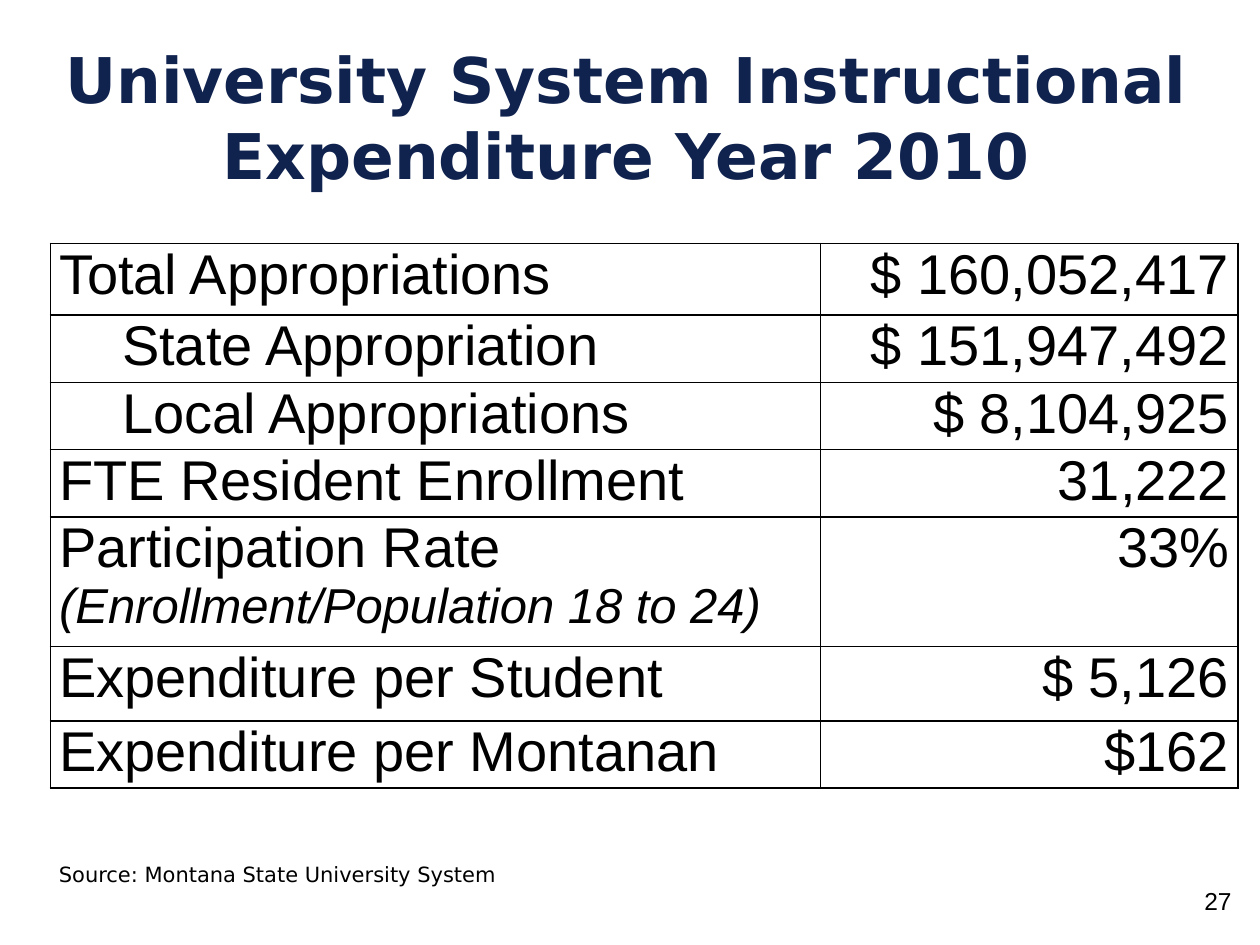
from dataclasses import dataclass

from lxml.etree import SubElement
from pptx import Presentation
from pptx.dml.color import RGBColor
from pptx.enum.text import MSO_ANCHOR, PP_ALIGN
from pptx.oxml.ns import qn
from pptx.slide import Slide
from pptx.table import _Cell
from pptx.text.text import _Paragraph
from pptx.util import Pt

NAVY = RGBColor(0x10, 0x22, 0x4E)
BLACK = RGBColor(0, 0, 0)

TITLE_FORMAT = {"name": "DejaVu Sans", "size": Pt(36), "bold": True}
SOURCE_FORMAT = {"name": "DejaVu Sans", "size": Pt(12)}
NUMBER_FORMAT = {"name": "Arial", "size": Pt(14)}
CELL_FORMAT = {"name": "Arial", "size": Pt(32), "bold": False}
NOTE_FORMAT = CELL_FORMAT | {"size": Pt(28), "italic": True}


@dataclass
class Measure:
    label: str
    value: str
    height: float
    indent: float = 0
    note: str = ""


@dataclass
class Label:
    text: str
    left: float
    top: float
    width: float
    height: float
    style: dict
    color: RGBColor = BLACK
    alignment: PP_ALIGN = PP_ALIGN.LEFT
    anchor: MSO_ANCHOR = MSO_ANCHOR.TOP


LABELS = [
    Label("University System Instructional Expenditure Year 2010", 18.7, 23, 678.2, 87.1,
          TITLE_FORMAT, NAVY, PP_ALIGN.CENTER, MSO_ANCHOR.MIDDLE),
    Label("27", 681.1, 502.6, 38.9, 37.4, NUMBER_FORMAT),
    Label("Source: Montana State University System", 26.6, 488.9, 655.9, 36, SOURCE_FORMAT),
]

MEASURES = [
    Measure("Total Appropriations", "$ 160,052,417", 41),
    Measure("State Appropriation", "$ 151,947,492", 35.3, indent=36),
    Measure("Local Appropriations", "$ 8,104,925", 36.7, indent=36),
    Measure("FTE Resident Enrollment", "31,222", 38.2),
    Measure("Participation Rate ", "33%", 74.2, note="(Enrollment/Population 18 to 24)"),
    Measure("Expenditure per Student", "$ 5,126", 42.5),
    Measure("Expenditure per Montanan", "$162", 38.2),
]
COLUMN_WIDTHS = (440, 238.6)
TABLE_LEFT, TABLE_TOP = 28.8, 139


def add_span(para: _Paragraph, text: str, style: dict, color: RGBColor = BLACK) -> None:
    span = para.add_run()
    span.text = text
    for name, value in style.items():
        setattr(span.font, name, value)
    span.font.color.rgb = color


def add_label(slide: Slide, label: Label) -> None:
    box = slide.shapes.add_textbox(
        Pt(label.left), Pt(label.top), Pt(label.width), Pt(label.height))
    frame = box.text_frame
    frame.word_wrap = True
    frame.vertical_anchor = label.anchor
    para = frame.paragraphs[0]
    para.alignment = label.alignment
    add_span(para, label.text, label.style, label.color)


def format_cell(cell: _Cell) -> None:
    """Set the insets, black borders and empty fill of a cell."""
    insets = {"margin_left": 5, "margin_right": 5, "margin_top": 0, "margin_bottom": 0}
    for name, value in insets.items():
        setattr(cell, name, Pt(value))
    properties = cell._tc.get_or_add_tcPr()
    for side in ("lnL", "lnR", "lnT", "lnB"):
        border = SubElement(properties, qn(f"a:{side}"), w=str(Pt(1)))
        fill = SubElement(border, qn("a:solidFill"))
        SubElement(fill, qn("a:srgbClr"), val=str(BLACK))
    cell.fill.background()


def add_measures(slide: Slide, measures: list[Measure]) -> None:
    frame = slide.shapes.add_table(
        len(measures), len(COLUMN_WIDTHS), Pt(TABLE_LEFT), Pt(TABLE_TOP),
        Pt(sum(COLUMN_WIDTHS)), Pt(sum(measure.height for measure in measures)))
    table = frame.table
    table.first_row = table.horz_banding = False
    for column, width in zip(table.columns, COLUMN_WIDTHS):
        column.width = Pt(width)
    for row, measure in zip(table.rows, measures):
        row.height = Pt(measure.height)
        for cell in row.cells:
            format_cell(cell)
        label_para, value_para = (cell.text_frame.paragraphs[0] for cell in row.cells)
        if measure.indent:
            label_properties = label_para._p.get_or_add_pPr()
            label_properties.set("marL", str(Pt(measure.indent)))
            label_properties.set("indent", "0")
        add_span(label_para, measure.label, CELL_FORMAT)
        if measure.note:
            add_span(label_para, measure.note, NOTE_FORMAT)
        value_para.alignment = PP_ALIGN.RIGHT
        add_span(value_para, measure.value, CELL_FORMAT)


def main() -> None:
    deck = Presentation()
    deck.slide_width, deck.slide_height = Pt(720), Pt(540)
    slide = deck.slides.add_slide(deck.slide_layouts[6])
    for label in LABELS:
        add_label(slide, label)
    add_measures(slide, MEASURES)
    deck.save("out.pptx")


if __name__ == "__main__":
    main()
